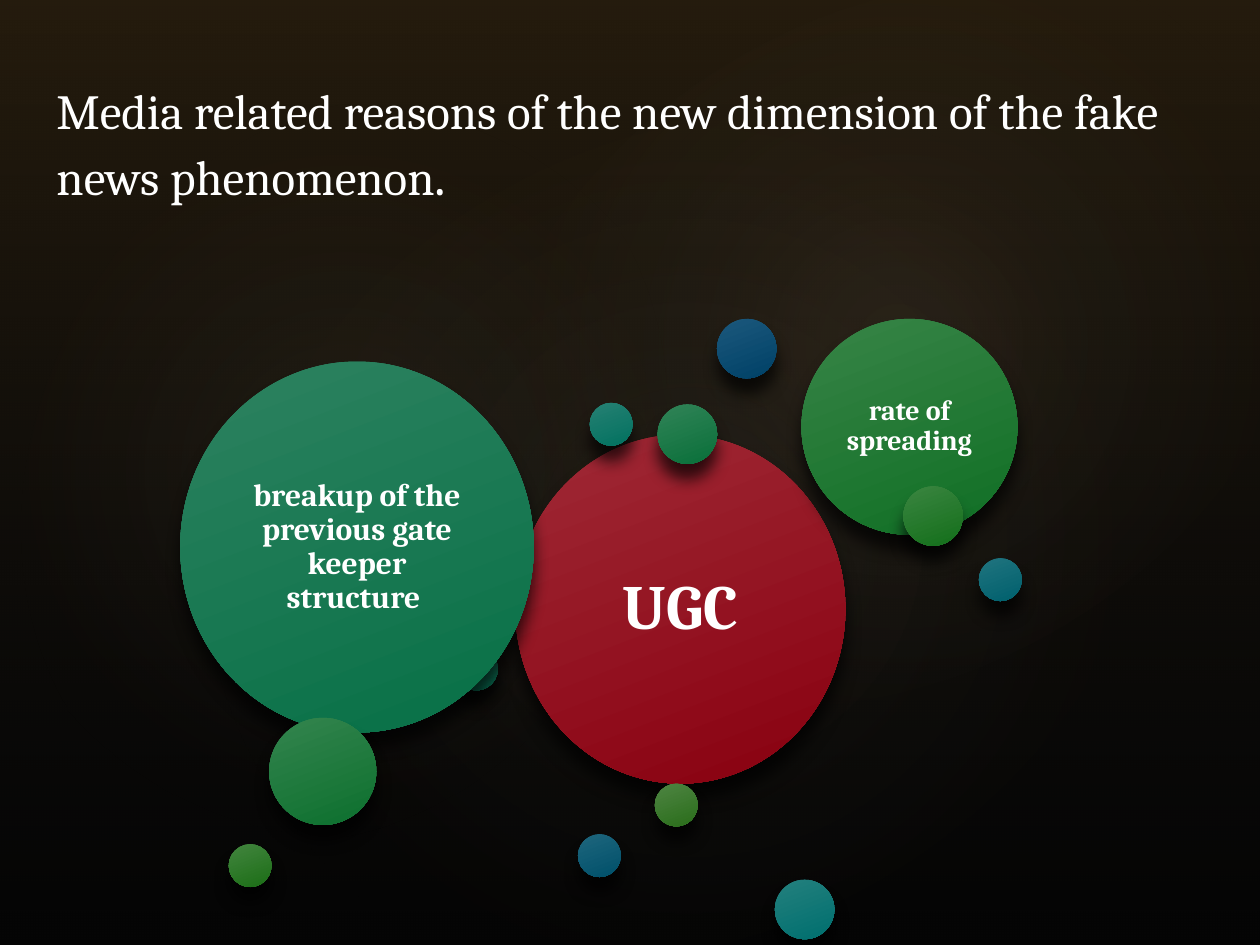
from lxml import etree
from pptx import Presentation
from pptx.dml.color import RGBColor
from pptx.enum.shapes import MSO_SHAPE as Preset
from pptx.enum.text import MSO_ANCHOR as Anchor, PP_ALIGN as Align
from pptx.oxml.ns import qn
from pptx.util import Pt

FONT = "Cambria"
WHITE = "FFFFFF"
SMALL, MEDIUM = 24.5, 34

# Small bubbles: left, top, diameter, light colour, dark colour
BUBBLES_BEHIND = [
    (409.7, 182.2, MEDIUM, "1B587C", "004167"),
    (330.3, 476.7, SMALL, "1E667D", "00506A"),
    (559.4, 319, SMALL, "20747F", "00606D"),
    (442.8, 502.7, MEDIUM, "23807E", "006F6E"),
    (337, 230.2, SMALL, "268173", "027160"),
    (260, 370.1, SMALL, "298269", "047153"),
]
BUBBLES_MIDDLE = [
    (375.8, 231.1, MEDIUM, "308357", "0A703A"),
    (153.8, 410.2, 61.2, "33844E", "0D702E"),
]
BUBBLES_FRONT = [
    (516.2, 277.9, MEDIUM, "3A8540", "146F1B"),
    (130.7, 482.4, SMALL, "42853E", "1C6E17"),
    (374.2, 447.8, SMALL, "4E8542", "2A6D1B"),
]

# Background glows: left, top, width, height, rotation, opacity
GLOWS = [
    (108, 82.1, 570.2, 449.3, 328.7, 7),
    (-21.6, 92.2, 436.3, 352.8, 294.3, 8),
    (257.8, 9.4, 510.5, 374.4, 328.7, 8),
]


def rgb(hex_color):
    return RGBColor.from_string(hex_color)


def add_child(parent, tag, **attributes):
    child = etree.SubElement(parent, qn(tag))
    for name, value in attributes.items():
        child.set(name, str(value))
    return child


def add_color(parent, hex_color, opacity):
    color = add_child(parent, "a:srgbClr", val=hex_color)
    if opacity < 100:
        add_child(color, "a:alpha", val=opacity * 1000)


def fill_gradient(shape, stops, angle=None):
    """Fill linearly at the angle, or outwards from the centre without one."""
    shape.fill.gradient()
    gradient = shape._element.spPr.find(qn("a:gradFill"))
    for child in list(gradient):
        gradient.remove(child)
    stop_list = add_child(gradient, "a:gsLst")
    for position, hex_color, opacity in stops:
        stop = add_child(stop_list, "a:gs", pos=position * 1000)
        add_color(stop, hex_color, opacity)
    if angle is None:
        path = add_child(gradient, "a:path", path="circle")
        add_child(path, "a:fillToRect", l=50000, t=50000, r=50000, b=50000)
    else:
        add_child(gradient, "a:lin", ang=angle * 60000, scaled=0)


def add_plain_shape(slide, preset, left, top, width, height):
    shape = slide.shapes.add_shape(preset, Pt(left), Pt(top), Pt(width), Pt(height))
    shape.shadow.inherit = False
    shape.line.fill.background()
    return shape


def add_run(paragraph, text, size, bold=False):
    run = paragraph.add_run()
    run.text = text
    run.font.name = FONT
    run.font.size = Pt(size)
    run.font.bold = bold
    run.font.color.rgb = rgb(WHITE)


def add_background(slide, width, height):
    slide.background.fill.solid()
    slide.background.fill.fore_color.rgb = rgb("000000")
    wash = add_plain_shape(slide, Preset.RECTANGLE, 0, 0, width, height)
    fill_gradient(wash, [(0, "674D26", 36), (100, "323232", 10)], angle=90)
    for *box, rotation, opacity in GLOWS:
        glow = add_plain_shape(slide, Preset.OVAL, *box)
        glow.rotation = rotation
        fill_gradient(glow, [(0, "DAC19B", opacity), (58, "323232", 0)])


def add_title(slide):
    title = slide.shapes.add_textbox(Pt(25.2), Pt(42.5), Pt(686.2), Pt(80))
    title.text_frame.word_wrap = True
    paragraph = title.text_frame.paragraphs[0]
    add_run(paragraph, "Media related reasons of the new dimension of the fake "
                       "news phenomenon", 28)
    add_run(paragraph, ".", 32)


def add_circle(slide, left, top, width, height, light, dark):
    circle = add_plain_shape(slide, Preset.OVAL, left, top, width, height)
    fill_gradient(circle, [(0, light, 100), (100, dark, 100)], angle=69)
    effects = circle._element.spPr.find(qn("a:effectLst"))
    shadow = add_child(effects, "a:outerShdw", blurRad=Pt(9), dist=Pt(9),
                       dir=90 * 60000, algn="ctr", rotWithShape=0)
    add_color(shadow, "000000", 70)
    return circle


def add_bubbles(slide, bubbles):
    for left, top, diameter, light, dark in bubbles:
        add_circle(slide, left, top, diameter, diameter, light, dark)


def add_labelled_circle(slide, box, light, dark, text, size, inset):
    frame = add_circle(slide, *box, light, dark).text_frame
    frame.word_wrap = True
    frame.vertical_anchor = Anchor.MIDDLE
    frame.margin_left = frame.margin_right = Pt(inset)
    frame.margin_top = frame.margin_bottom = Pt(inset)
    paragraph = frame.paragraphs[0]
    paragraph.alignment = Align.CENTER
    paragraph.line_spacing = 0.9
    add_run(paragraph, text, size, bold=True)


def main():
    width, height = 720, 540
    presentation = Presentation()
    presentation.slide_width = Pt(width)
    presentation.slide_height = Pt(height)
    slide = presentation.slides.add_slide(presentation.slide_layouts[6])

    add_background(slide, width, height)
    add_title(slide)

    # Circles from back to front
    add_labelled_circle(slide, (294.5, 248.4, 188.6, 199.4), "9F2936", "89000F",
                        "UGC", 36, inset=10.8)
    add_bubbles(slide, BUBBLES_BEHIND)
    add_labelled_circle(slide, (103, 206.6, 202, 212), "2D8260", "077046",
                        "breakup of the previous gate keeper structure ", 18, inset=5)
    add_bubbles(slide, BUBBLES_MIDDLE)
    add_labelled_circle(slide, (458, 182.2, 123.4, 123.4), "378447", "106F24",
                        "rate of spreading", 16, inset=5)
    add_bubbles(slide, BUBBLES_FRONT)

    presentation.save("out.pptx")


if __name__ == "__main__":
    main()
